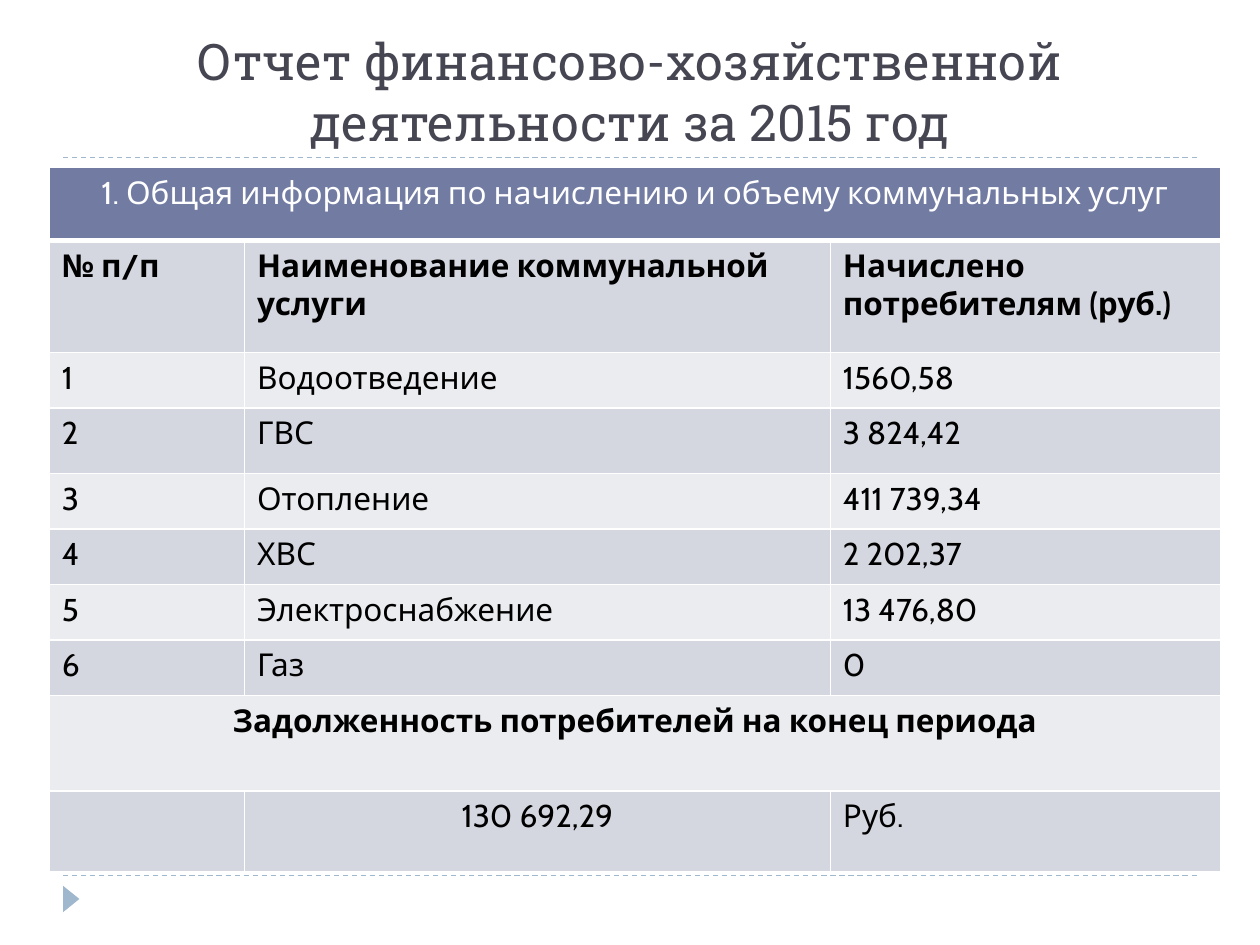
from dataclasses import dataclass
from lxml import etree
from pptx import Presentation
from pptx.dml.color import RGBColor
from pptx.enum.dml import MSO_LINE
from pptx.enum.shapes import MSO_CONNECTOR, MSO_SHAPE
from pptx.enum.text import MSO_ANCHOR, PP_ALIGN
from pptx.oxml.ns import qn
from pptx.util import Inches, Pt

DASH = MSO_LINE.DASH
LINE = MSO_CONNECTOR.STRAIGHT
TRIANGLE = MSO_SHAPE.ISOSCELES_TRIANGLE
BOTTOM = MSO_ANCHOR.BOTTOM
LEFT, CENTER = PP_ALIGN.LEFT, PP_ALIGN.CENTER


@dataclass(frozen=True)
class Theme:
    """Colours, fonts and type sizes of the slide."""
    title: str = "464653"
    accent: str = "9FB8CD"
    head: str = "727CA3"
    dark: str = "D5D7E0"
    light: str = "EBECF0"
    white: str = "FFFFFF"
    black: str = "000000"
    serif: str = "Roboto Slab"
    sans: str = "Cabin"
    big: float = 28.8
    body: float = 18


THEME = Theme()
TITLE = "Отчет финансово-хозяйственной деятельности за 2015 год"
COLS = [1.55, 4.65, 3.1]
ROWS = [
    (0.58, ["1. Общая информация по начислению и объему коммунальных услуг"]),
    (0.89, ["№ п/п", "Наименование коммунальной услуги",
            "Начислено потребителям (руб.)"]),
    (0.44, ["1", "Водоотведение", "1560,58"]),
    (0.52, ["2", "ГВС", "3 824,42"]),
    (0.44, ["3", "Отопление", "411 739,34"]),
    (0.44, ["4", "ХВС", "2 202,37"]),
    (0.44, ["5", "Электроснабжение", "13 476,80"]),
    (0.44, ["6", "Газ", "0"]),
    (0.76, ["Задолженность потребителей на конец периода"]),
    (0.64, ["", "130 692,29", "Руб."]),
]
BOLD = (1, 8)
MIDDLE = {(0, 0), (8, 0), (9, 1)}


def write(frame, text, font, size, color, align=LEFT, bold=False):
    """Put one styled paragraph into a text frame."""
    frame.text = text
    para = frame.paragraphs[0]
    para.alignment = align
    para.font.size = Pt(size)
    for run in para.runs:
        run.font.name = font
        run.font.size = Pt(size)
        run.font.bold = bold
        run.font.color.rgb = RGBColor.from_string(color)


def add_title(slide, left, top, width, height):
    """Place the title at the bottom of its box."""
    box = slide.shapes.add_textbox(
        Inches(left), Inches(top), Inches(width), Inches(height))
    frame = box.text_frame
    frame.word_wrap = True
    frame.vertical_anchor = BOTTOM
    write(frame, TITLE, THEME.serif, THEME.big, THEME.title, CENTER)


def add_rule(slide, left, top, width):
    """Draw a dashed horizontal rule."""
    rule = slide.shapes.add_connector(
        LINE, Inches(left), Inches(top), Inches(left + width), Inches(top))
    rule.line.color.rgb = RGBColor.from_string(THEME.accent)
    rule.line.width = Pt(0.75)
    rule.line.dash_style = DASH
    etree.SubElement(rule.element.spPr, qn("a:effectLst"))


def add_marker(slide, left, top, width, height):
    """Place the page marker that points right."""
    mark = slide.shapes.add_shape(
        TRIANGLE, Inches(left), Inches(top), Inches(width), Inches(height))
    mark.rotation = 90
    mark.shadow.inherit = False
    mark.fill.solid()
    mark.fill.fore_color.rgb = RGBColor.from_string(THEME.accent)
    mark.line.fill.background()


def set_cell(cell, fill, base):
    """Give a cell its white borders and its fill."""
    props = cell._tc.get_or_add_tcPr()
    for side, width in zip("LRTB", (1, 1, 1, base)):
        edge = etree.SubElement(props, qn(f"a:ln{side}"), w=str(Pt(width)))
        solid = etree.SubElement(edge, qn("a:solidFill"))
        etree.SubElement(solid, qn("a:srgbClr"), val=THEME.white)
    cell.fill.solid()
    cell.fill.fore_color.rgb = RGBColor.from_string(fill)


def add_grid(slide, left, top, width, height):
    """Build the table of charges and debt."""
    table = slide.shapes.add_table(
        len(ROWS), len(COLS), Inches(left), Inches(top),
        Inches(width), Inches(height)).table
    for col, size in zip(table.columns, COLS):
        col.width = Inches(size)
    for i, (size, texts) in enumerate(ROWS):
        table.rows[i].height = Inches(size)
        fill = THEME.dark if i % 2 else THEME.light
        if i == 0:
            fill = THEME.head
        for j in range(len(COLS)):
            set_cell(table.cell(i, j), fill, 1 if i else 3)
        if len(texts) == 1:
            table.cell(i, 0).merge(table.cell(i, len(COLS) - 1))
        for j, text in enumerate(texts):
            write(table.cell(i, j).text_frame, text, THEME.sans, THEME.body,
                  THEME.black if i else THEME.white,
                  CENTER if (i, j) in MIDDLE else LEFT, i in BOLD)


def main():
    """Build and save the slide."""
    deck = Presentation()
    deck.slide_width, deck.slide_height = Inches(10), Inches(7.5)
    slide = deck.slides.add_slide(deck.slide_layouts[6])
    for top in (6.95, 1.25):
        add_rule(slide, 0.5, top, 9)
    add_marker(slide, 0.46, 7.07, 0.21, 0.13)
    add_title(slide, 0.5, 0.25, 9, 1)
    add_grid(slide, 0.39, 1.33, 9.3, 5.58)
    deck.save("out.pptx")


if __name__ == "__main__":
    main()
